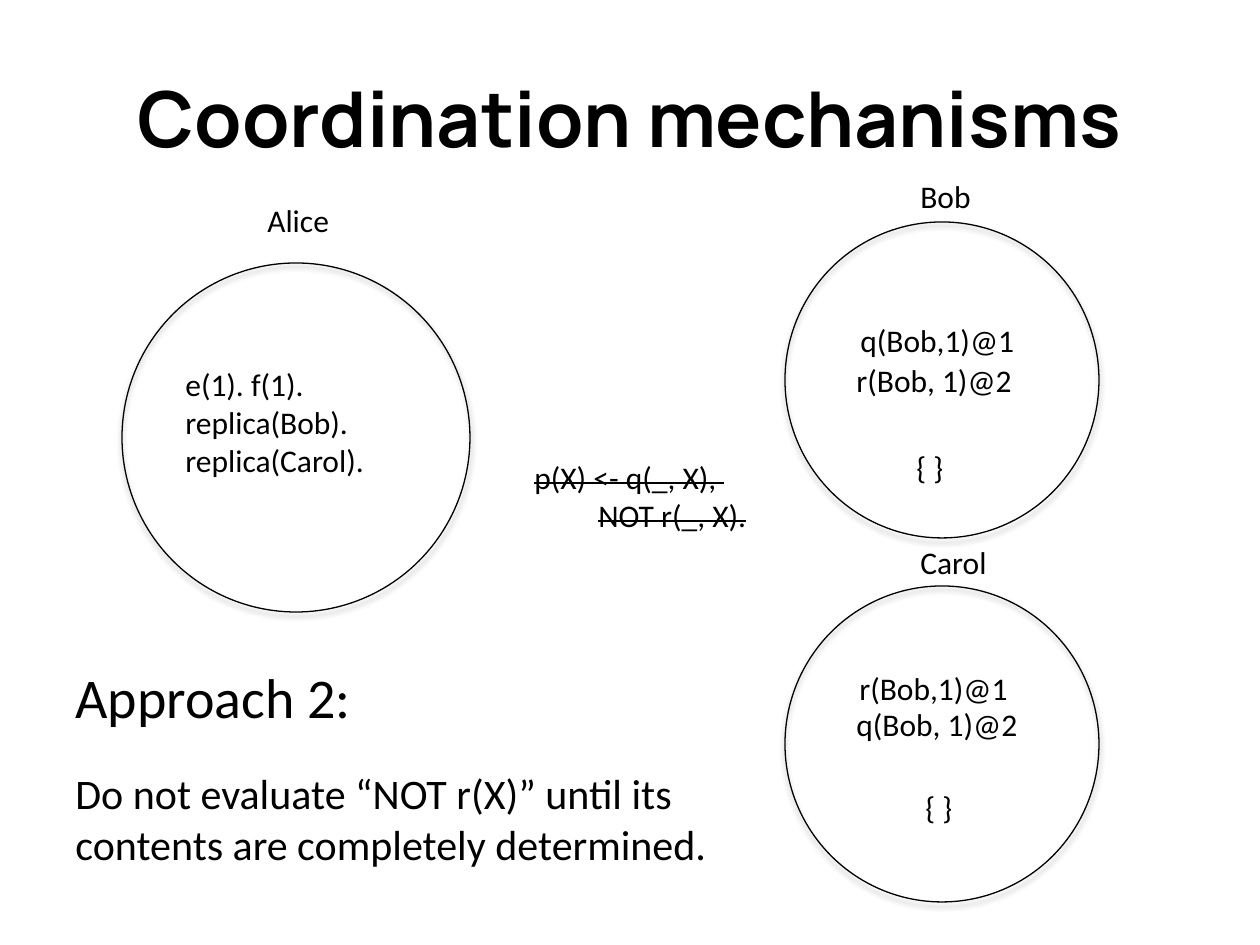
"""Build the slide on coordination mechanisms between Alice, Bob and Carol."""
import pptx
import pptx.dml.color
import pptx.enum.shapes
import pptx.enum.text
import pptx.oxml
import pptx.oxml.ns
import pptx.util

PX = 914400 / 126
COLOURS = {"ink": "000000"}
TITLE = "Coordination mechanisms"
TITLE_BOX = (63, 38, 1134, 157)
CIRCLES = [(122, 263, 348, 349), (785, 222, 314, 316), (785, 586, 314, 316)]
LABELS = [
    ((255, 195, 88, 50), ["Alice"]),
    ((908, 171, 77, 50), ["Bob"]),
    ((908, 537, 93, 50), ["Carol"]),
    ((173, 359, 207, 165), ["e(1). f(1).", "replica(Bob).", "replica(Carol)."]),
    ((848, 315, 181, 50), ["q(Bob,1)@1"]),
    ((844, 355, 183, 50), ["r(Bob, 1)@2"]),
    ((904, 442, 53, 50), ["{ }"]),
    ((847, 663, 175, 50), ["r(Bob,1)@1"]),
    ((844, 699, 188, 50), ["q(Bob, 1)@2"]),
    ((913, 782, 53, 50), ["{ }"]),
]
RULE_BOX = (522, 452, 241, 89)
RULE = ["p(X) <- q(_, X), ", "\tNOT r(_, X)."]
RULE_TAB = 64
APPROACH_BOX = (63, 656, 672, 221)
APPROACH = [
    ("Approach 2:", 32, 0),
    ("Do not evaluate “NOT r(X)” until its", 24, 22),
    ("contents are completely determined.", 24, 0),
]
NAMESPACE = 'xmlns:a="http://schemas.openxmlformats.org/drawingml/2006/main"'
SHADOW = (
    f'<a:outerShdw {NAMESPACE} blurRad="39370" dist="22860" dir="5400000" rotWithShape="0">'
    f'<a:srgbClr val="{COLOURS["ink"]}"><a:alpha val="35000"/></a:srgbClr></a:outerShdw>'
)


def px(length):
    return round(length * PX)


def place(box):
    return [px(length) for length in box]


def colour(name):
    return pptx.dml.color.RGBColor.from_string(COLOURS[name])


def write(paragraph, text, size=18, font="Calibri", bold=False, strike=False, before=0, tab=None):
    run = paragraph.add_run()
    run.text = text
    run.font.size = pptx.util.Pt(size)
    run.font.name = font
    run.font.bold = bold
    run.font.color.rgb = colour("ink")
    paragraph.space_before = pptx.util.Pt(before)
    if strike:
        run.font._element.set("strike", "sngStrike")
    if tab:
        paragraph._p.get_or_add_pPr().append(pptx.oxml.parse_xml(
            f'<a:tabLst {NAMESPACE}><a:tab pos="{px(tab)}" algn="l"/></a:tabLst>'))


def add_text(slide, box, lines):
    frame = slide.shapes.add_textbox(*place(box)).text_frame
    frame.word_wrap = False
    frame.auto_size = pptx.enum.text.MSO_AUTO_SIZE.SHAPE_TO_FIT_TEXT
    for index, (text, style) in enumerate(lines):
        paragraph = frame.add_paragraph() if index else frame.paragraphs[0]
        write(paragraph, text, **style)


def add_circle(slide, box):
    circle = slide.shapes.add_shape(pptx.enum.shapes.MSO_SHAPE.OVAL, *place(box))
    circle.fill.background()
    circle.line.color.rgb = colour("ink")
    circle.line.width = pptx.util.Pt(0.75)
    circle.shadow.inherit = False
    effects = circle._element.spPr.find(pptx.oxml.ns.qn("a:effectLst"))
    effects.append(pptx.oxml.parse_xml(SHADOW))


def main():
    presentation = pptx.Presentation()
    presentation.slide_width = pptx.util.Inches(10)
    presentation.slide_height = pptx.util.Inches(7.5)
    slide = presentation.slides.add_slide(presentation.slide_layouts[5])

    title = slide.shapes.title
    title.left, title.top, title.width, title.height = place(TITLE_BOX)
    title.text_frame.vertical_anchor = pptx.enum.text.MSO_ANCHOR.MIDDLE
    heading = title.text_frame.paragraphs[0]
    heading.alignment = pptx.enum.text.PP_ALIGN.CENTER
    write(heading, TITLE, size=44, font="Manrope", bold=True)

    for box in CIRCLES:
        add_circle(slide, box)
    for box, lines in LABELS:
        add_text(slide, box, [(text, {}) for text in lines])
    add_text(slide, RULE_BOX, [(text, {"strike": True, "tab": RULE_TAB}) for text in RULE])
    add_text(slide, APPROACH_BOX,
             [(text, {"size": size, "before": before}) for text, size, before in APPROACH])
    presentation.save("out.pptx")


if __name__ == "__main__":
    main()
